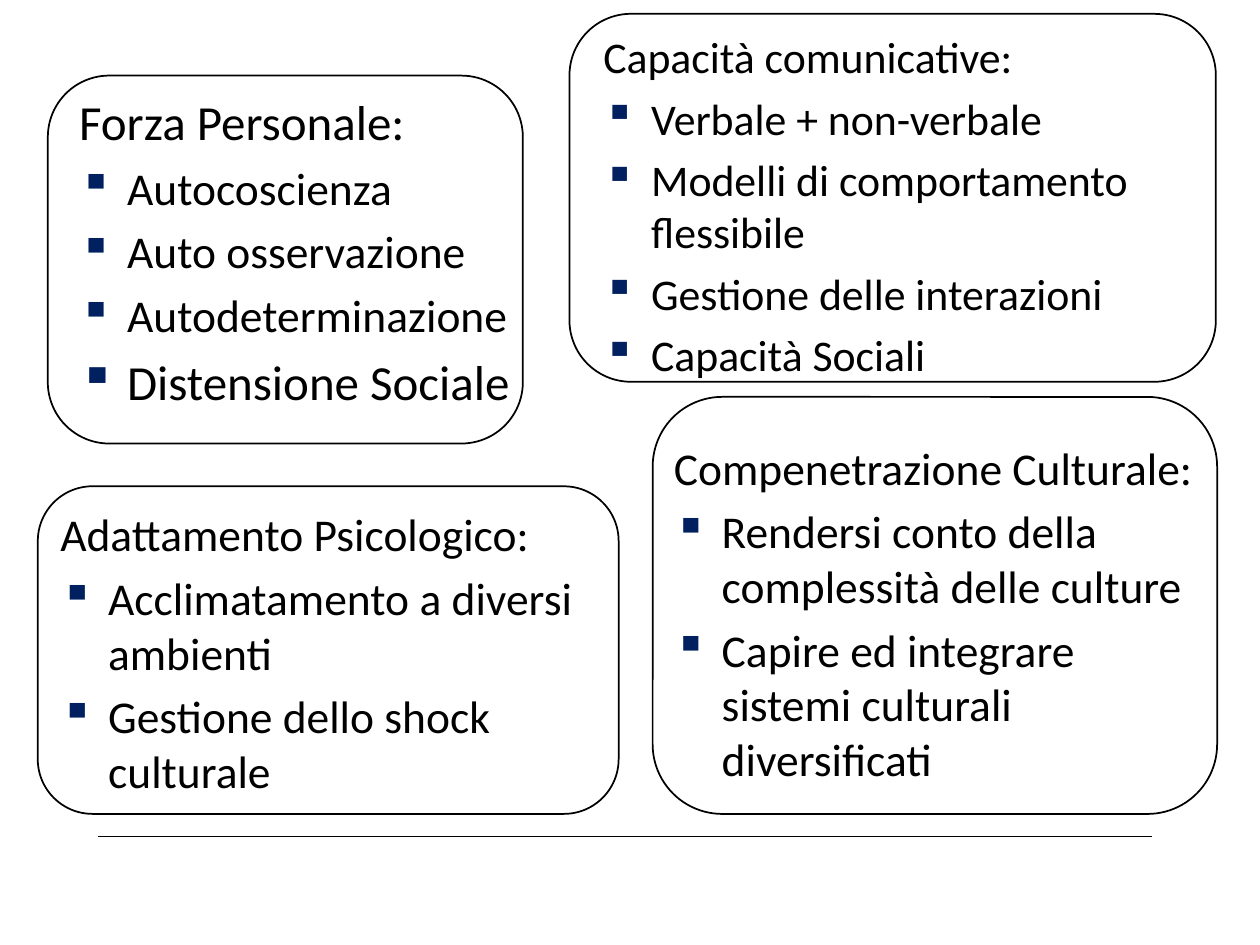
import pptx
import pptx.dml.color
import pptx.enum.shapes
import pptx.oxml.ns
import pptx.util
from pptx.util import Inches
from lxml import etree

CARDS = [
    {"frame": (0.3, 3.86, 4.61, 2.6), "text": (0.38, 3.97, 4.61, 2.48),
     "lines": [("Adattamento Psicologico:", 26),
               ("Acclimatamento a diversi ambienti", 26),
               ("Gestione dello shock culturale", 26)]},
    {"frame": (5.18, 3.15, 4.48, 3.31), "text": (5.25, 3.44, 4.33, 2.88),
     "lines": [("Compenetrazione Culturale:", 26),
               ("Rendersi conto della complessità delle culture", 26),
               ("Capire ed integrare sistemi culturali diversificati", 26)]},
    {"frame": (0.38, 0.6, 3.77, 2.92), "text": (0.53, 0.68, 3.69, 2.75),
     "lines": [("Forza Personale:", 28),
               ("Autocoscienza", 26),
               ("Auto osservazione", 26),
               ("Autodeterminazione", 26),
               ("Distensione Sociale", 28)]},
    {"frame": (4.52, 0.11, 5.13, 2.92), "text": (4.69, 0.19, 4.96, 2.75),
     "lines": [("Capacità comunicative:", 25),
               ("Verbale + non-verbale", 25),
               ("Modelli di comportamento flessibile", 25),
               ("Gestione delle interazioni", 25),
               ("Capacità Sociali", 25)]},
]


def color(hex_value):
    """Return the colour for a hex string."""
    return pptx.dml.color.RGBColor.from_string(hex_value)


def add_element(parent, tag, **attributes):
    """Append a DrawingML element to its parent."""
    return etree.SubElement(parent, pptx.oxml.ns.qn(tag), attributes)


def set_hanging_indent(p, bulleted):
    """Give a paragraph a hanging indent and, if wanted, a square bullet."""
    p_pr = p._p.get_or_add_pPr()
    indent = Inches(0.38)
    p_pr.set("marL", str(indent))
    p_pr.set("indent", str(-indent))
    if bulleted:
        add_element(add_element(p_pr, "a:buClr"), "a:srgbClr", val="002060")
        add_element(p_pr, "a:buChar", char="▪")
    else:
        add_element(p_pr, "a:buNone")


def add_text(shapes, box, lines):
    """Write a heading and its bulleted items in the box."""
    tf = shapes.add_textbox(*map(Inches, box)).text_frame
    tf.word_wrap = True
    for i, (text, size) in enumerate(lines):
        p = tf.paragraphs[0] if i == 0 else tf.add_paragraph()
        p.text = text
        set_hanging_indent(p, bulleted=i > 0)
        p.space_before = pptx.util.Pt(0.2 * size if i else 0)
        font = p.runs[0].font
        font.name = "Calibri"
        font.size = pptx.util.Pt(size)
        font.color.rgb = color("000000")


def add_frame(shapes, box):
    """Draw an unfilled rounded frame in the box."""
    rounded = pptx.enum.shapes.MSO_SHAPE.ROUNDED_RECTANGLE
    frame = shapes.add_shape(rounded, *map(Inches, box))
    frame.adjustments[0] = 0.167
    frame.shadow.inherit = False
    frame.fill.background()
    frame.line.color.rgb = color("000000")
    frame.line.width = pptx.util.Pt(1)


def add_card(s, card):
    """Group a text list with its rounded frame."""
    shapes = s.shapes.add_group_shape().shapes
    add_text(shapes, card["text"], card["lines"])
    add_frame(shapes, card["frame"])


def add_footer_rule(s, left, right, y):
    """Draw the thin horizontal rule above the footer."""
    straight = pptx.enum.shapes.MSO_CONNECTOR.STRAIGHT
    rule = s.shapes.add_connector(straight, *map(Inches, (left, y, right, y)))
    rule.line.color.rgb = color("000000")
    rule.line.width = pptx.util.Pt(0.5)
    add_element(rule._element.spPr, "a:effectLst")


def main():
    """Build and save the slide."""
    prs = pptx.Presentation()
    prs.slide_width, prs.slide_height = Inches(10), Inches(7.5)
    s = prs.slides.add_slide(prs.slide_layouts[6])
    add_footer_rule(s, 0.78, 9.14, 6.64)
    for card in CARDS:
        add_card(s, card)
    prs.save("out.pptx")


if __name__ == "__main__":
    main()
